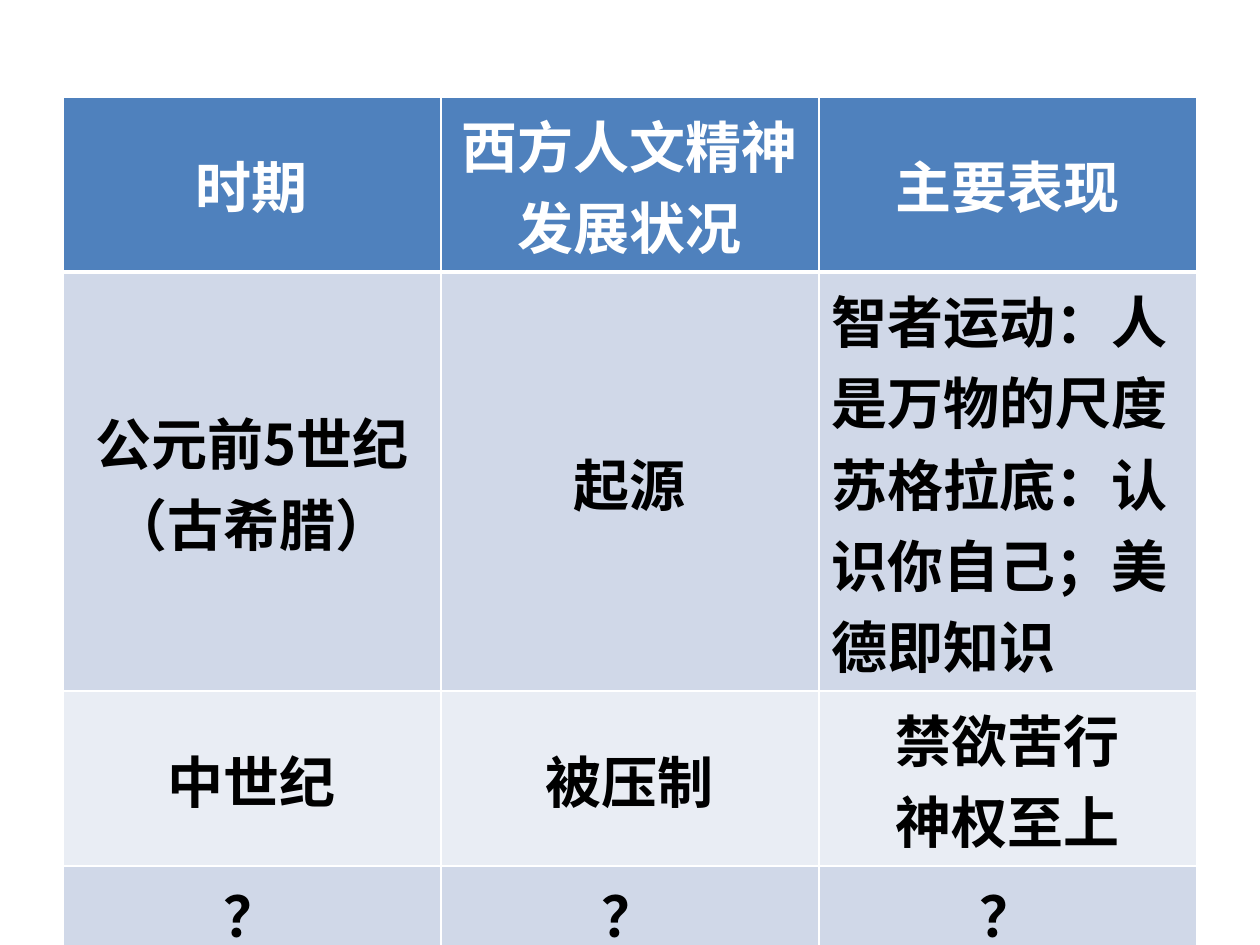
from lxml import etree
from pptx import Presentation
from pptx import util as u
from pptx.dml import color
from pptx.enum import text
from pptx.oxml import ns

FONT = "Noto Sans CJK SC"
WHITE, BLACK = "FFFFFF", "000000"
HEADER_FILL, BAND_FILLS = "4F81BD", ("D0D8E8", "E9EDF4")
CENTER, LEFT = text.PP_ALIGN.CENTER, text.PP_ALIGN.LEFT


def rgb(value):
    return color.RGBColor.from_string(value)


def write(frame, content, size=32, ink=BLACK, bold=True, align=CENTER):
    """Fill a text frame, one paragraph per line of content."""
    for index, line in enumerate(content.split("\n")):
        paragraph = frame.add_paragraph() if index else frame.paragraphs[0]
        paragraph.alignment = align
        run = paragraph.add_run()
        run.text = line
        font = run.font
        font.size, font.bold, font.name = u.Pt(size), bold, FONT
        font.color.rgb = rgb(ink)
        east_asian = etree.SubElement(run._r.get_or_add_rPr(), ns.qn("a:ea"))
        east_asian.set("typeface", FONT)


class Deck:
    def __init__(self, width, height):
        self.prs = Presentation()
        self.prs.slide_width, self.prs.slide_height = u.Pt(width), u.Pt(height)
        self.slide = self.prs.slides.add_slide(self.prs.slide_layouts[6])

    def border(self, cell, side, width):
        line = etree.SubElement(cell._tc.get_or_add_tcPr(), ns.qn(f"a:ln{side}"))
        line.set("w", str(u.Pt(width)))
        fill = etree.SubElement(line, ns.qn("a:solidFill"))
        etree.SubElement(fill, ns.qn("a:srgbClr")).set("val", WHITE)

    def cell(self, cell, content, fill, bottom=1, **style):
        cell.vertical_anchor = text.MSO_ANCHOR.MIDDLE
        cell.margin_left = cell.margin_right = u.Pt(7.2)
        cell.margin_top = cell.margin_bottom = u.Pt(3.6)
        for side, width in zip("LRTB", (1, 1, 1, bottom)):
            self.border(cell, side, width)
        cell.fill.solid()
        cell.fill.fore_color.rgb = rgb(fill)
        write(cell.text_frame, content, **style)

    def table(self, left, top, column_width, heights, rows):
        columns = len(rows[0])
        table = self.slide.shapes.add_table(
            len(rows), columns, u.Pt(left), u.Pt(top),
            u.Pt(column_width * columns), u.Pt(sum(heights))).table
        for column in table.columns:
            column.width = u.Pt(column_width)
        for r, (height, row) in enumerate(zip(heights, rows)):
            table.rows[r].height = u.Pt(height)
            for c, content in enumerate(row):
                if r == 0:
                    self.cell(table.cell(r, c), content, HEADER_FILL,
                              bottom=3, ink=WHITE)
                else:
                    # Long explanations read from the left
                    align = LEFT if "：" in content else CENTER
                    self.cell(table.cell(r, c), content,
                              BAND_FILLS[(r - 1) % 2], align=align)


def main():
    deck = Deck(720, 540)

    # Stages of Western humanism
    stages = [
        ("时期", "西方人文精神\n发展状况", "主要表现"),
        ("公元前5世纪\n（古希腊）", "起源",
         "智者运动：人是万物的尺度\n苏格拉底：认识你自己；美德即知识"),
        ("中世纪", "被压制", "禁欲苦行\n神权至上"),
        ("？", "？", "？"),
    ]
    deck.table(36, 55.4, 216, (84, 199.5, 84, 45), stages)

    deck.prs.save("out.pptx")


if __name__ == "__main__":
    main()
